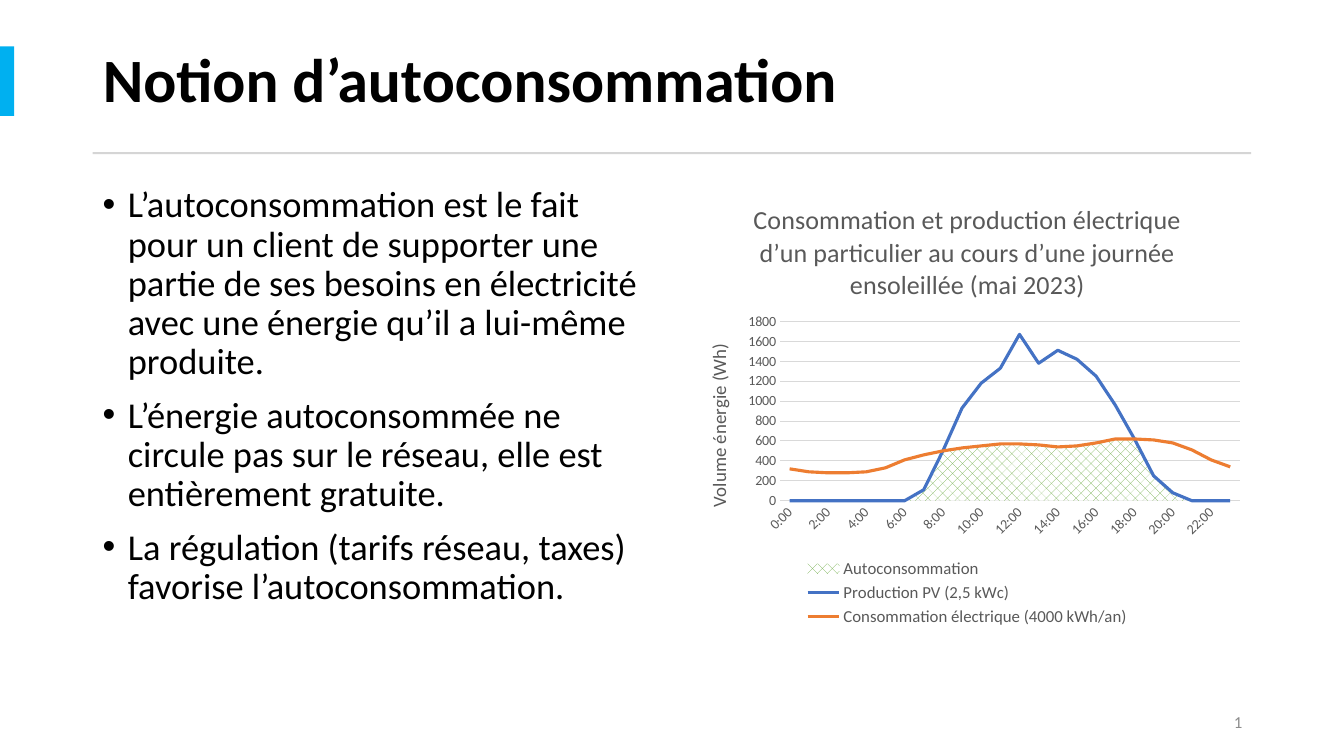
from lxml.etree import SubElement as Sub
from pptx import Presentation
from pptx.chart.data import CategoryChartData as Data
from pptx.dml.color import RGBColor
from pptx.enum.chart import XL_CHART_TYPE as Kind, XL_LEGEND_POSITION as Side, XL_TICK_MARK as Tick
from pptx.enum.dml import MSO_PATTERN as Hatch
from pptx.enum.shapes import MSO_SHAPE as Form
from pptx.enum.text import MSO_ANCHOR as Anchor, PP_ALIGN as Align
from pptx.oxml.ns import qn
from pptx.util import Inches, Pt

WIDE, HIGH = Inches(13.33), Inches(7.5)
LEFT, SPAN = 6.9, 86.2
GREY, PALE = "595959", "D9D9D9"
POINTS = [
    "L’autoconsommation est le fait pour un client de supporter une partie de ses besoins en électricité avec une énergie qu’il a lui-même produite.",
    "L’énergie autoconsommée ne circule pas sur le réseau, elle est entièrement gratuite.",
    "La régulation (tarifs réseau, taxes) favorise l’autoconsommation.",
]
SOLAR = [0] * 7 + [110, 500, 930, 1180, 1330, 1670, 1380, 1510, 1420, 1250, 960, 620, 250, 80, 0, 0, 0]
USE = [320, 290, 280, 280, 290, 330, 410, 460, 500, 530, 550, 570,
       570, 560, 540, 550, 580, 620, 620, 610, 580, 510, 410, 340]
HOURS = [f"{hour}:00" for hour in range(24)]


def tint(code):
    return RGBColor.from_string(code)


def place(left, top, wide, high):
    return [round(share / 100 * size) for share, size in zip((left, top, wide, high), (WIDE, HIGH) * 2)]


def style(font, size, code, bold=False):
    for key, value in {"name": "Calibri", "size": Pt(size), "bold": bold}.items():
        setattr(font, key, value)
    font.color.rgb = tint(code)


def bar(slide, box, code):
    shape = slide.shapes.add_shape(Form.RECTANGLE, *place(*box))
    shape.shadow.inherit = False
    shape.fill.solid()
    shape.fill.fore_color.rgb = tint(code)
    shape.line.fill.background()


def head(slide, words):
    title = slide.shapes.title
    for key, value in zip(("left", "top", "width", "height"), place(LEFT, 3.6, SPAN, 14.67)):
        setattr(title, key, value)
    frame = title.text_frame
    frame.text = words
    frame.vertical_anchor = Anchor.MIDDLE
    para = frame.paragraphs[0]
    para.alignment, para.line_spacing = Align.LEFT, 0.9
    style(para.runs[0].font, 44, "000000", True)


def write(slide, box):
    frame = slide.shapes.add_textbox(*place(*box)).text_frame
    frame.word_wrap = True
    return frame


def bullets(slide, box, lines):
    frame = write(slide, box)
    for rank, line in enumerate(lines):
        para = frame.add_paragraph() if rank else frame.paragraphs[0]
        props = para._p.get_or_add_pPr()
        props.set("marL", str(Inches(0.25)))
        props.set("indent", str(Inches(-0.25)))
        para.line_spacing, para.space_before = 0.9, Pt(10 if rank else 0)
        Sub(props, qn("a:buFont"), typeface="Arial")
        Sub(props, qn("a:buChar"), char="•")
        run = para.add_run()
        run.text = line
        style(run.font, 26, "000000")


def number(slide, box):
    frame = write(slide, box)
    frame.vertical_anchor = Anchor.MIDDLE
    para = frame.paragraphs[0]
    para.alignment = Align.RIGHT
    run = para.add_run()
    run.text = "5"
    style(run.font, 12, "8C8C8C")
    field = run._r
    field.tag = qn("a:fld")
    field.set("id", "{B6F15528-21DE-4FAA-801E-634DDDAF4B2B}")
    field.set("type", "slidenum")


def caption(owner, words, size):
    frame = owner.text_frame
    frame.text = words
    style(frame.paragraphs[0].runs[0].font, size, GREY)


def layout(node, spots, inner=False):
    frame = node.find(qn("c:layout"))
    if frame is None:
        frame = Sub(node, qn("c:layout"))
        node.remove(frame)
        node.insert(1 if node.tag == qn("c:legend") else 0, frame)
    manual = Sub(frame, qn("c:manualLayout"))
    if inner:
        Sub(manual, qn("c:layoutTarget"), val="inner")
    for mode in ("xMode", "yMode"):
        Sub(manual, qn("c:" + mode), val="edge")
    for key, value in zip("xywh", spots):
        Sub(manual, qn("c:" + key), val=str(value))


def combine(chart, codes):
    plot = chart.plots[0]
    area = plot._element
    rows = list(plot.series)
    fill = rows[0].format.fill
    fill.patterned()
    fill.pattern = Hatch.PERCENT_30
    fill.fore_color.rgb, fill.back_color.rgb = tint("70AD47"), tint("FFFFFF")
    rows[0].format.line.fill.background()
    lines = area.makeelement(qn("c:lineChart"))
    area.addnext(lines)
    Sub(lines, qn("c:grouping"), val="standard")
    Sub(lines, qn("c:varyColors"), val="0")
    for row, code in zip(rows[1:], codes):
        row.format.line.width = Pt(2.25)
        row.format.line.color.rgb = tint(code)
        item = row._element
        lines.append(item)
        mark = Sub(item, qn("c:marker"))
        Sub(mark, qn("c:symbol"), val="none")
        item.find(qn("c:spPr")).addnext(mark)
        Sub(item, qn("c:smooth"), val="0")
    Sub(lines, qn("c:marker"), val="1")
    for axis in area.findall(qn("c:axId")):
        Sub(lines, qn("c:axId"), val=axis.get("val"))


def axes(chart):
    hours, power = chart.category_axis, chart.value_axis
    for axis in (hours, power):
        axis.major_tick_mark = axis.minor_tick_mark = Tick.NONE
        style(axis.tick_labels.font, 10, GREY)
    hours.has_major_gridlines = False
    power.has_major_gridlines = True
    for line in (hours.format.line, power.major_gridlines.format.line):
        line.width, line.color.rgb = Pt(0.75), tint(PALE)
    power.format.line.fill.background()
    for key, value in {"minimum_scale": 0, "maximum_scale": 1800, "major_unit": 200}.items():
        setattr(power, key, value)
    caption(power.axis_title, "Volume énergie (Wh)", 13.5)
    power._element.find(qn("c:crossBetween")).set("val", "between")
    node = hours._element
    node.find(qn("c:txPr")).find(qn("a:bodyPr")).set("rot", "-2700000")
    skip = Sub(node, qn("c:tickLblSkip"), val="2")
    last = node.find(qn("c:noMultiLvlLbl"))
    if last is not None:
        last.addprevious(skip)


def graph(slide, box):
    data = Data()
    data.categories = HOURS
    data.add_series("Autoconsommation", [min(pair) for pair in zip(SOLAR, USE)])
    data.add_series("Production PV (2,5 kWc)", SOLAR)
    data.add_series("Consommation électrique (4000 kWh/an)", USE)
    chart = slide.shapes.add_chart(Kind.AREA, *place(*box), data).chart
    style(chart.font, 10, "000000")
    chart.plots[0].vary_by_categories = False
    chart.has_title = chart.has_legend = True
    caption(chart.chart_title, "Consommation et production électrique d’un particulier au cours d’une journée ensoleillée (mai 2023)", 18.6)
    chart.chart_title.include_in_layout = False
    legend = chart.legend
    legend.position, legend.include_in_layout = Side.BOTTOM, False
    style(legend.font, 12, GREY)
    axes(chart)
    combine(chart, ["4472C4", "ED7D31"])
    layout(legend._element, (0.21, 0.83, 0.58, 0.17))
    layout(chart._chartSpace.chart.plotArea, (0.17, 0.31, 0.81, 0.4), True)


def main():
    deck = Presentation()
    deck.slide_width, deck.slide_height = WIDE, HIGH
    slide = deck.slides.add_slide(deck.slide_layouts[5])
    bar(slide, (0, 6.13, 1.05, 9.2), "00B0F0")
    bar(slide, (LEFT, 20.13, SPAN, 0.27), "D5D5D5")
    head(slide, "Notion d’autoconsommation")
    bullets(slide, (LEFT, 24, 42.6, 59.47), POINTS)
    graph(slide, (50.86, 24.13, 42.24, 59.33))
    number(slide, (70.67, 92.8, 22.5, 5.33))
    deck.save("out.pptx")


if __name__ == "__main__":
    main()
